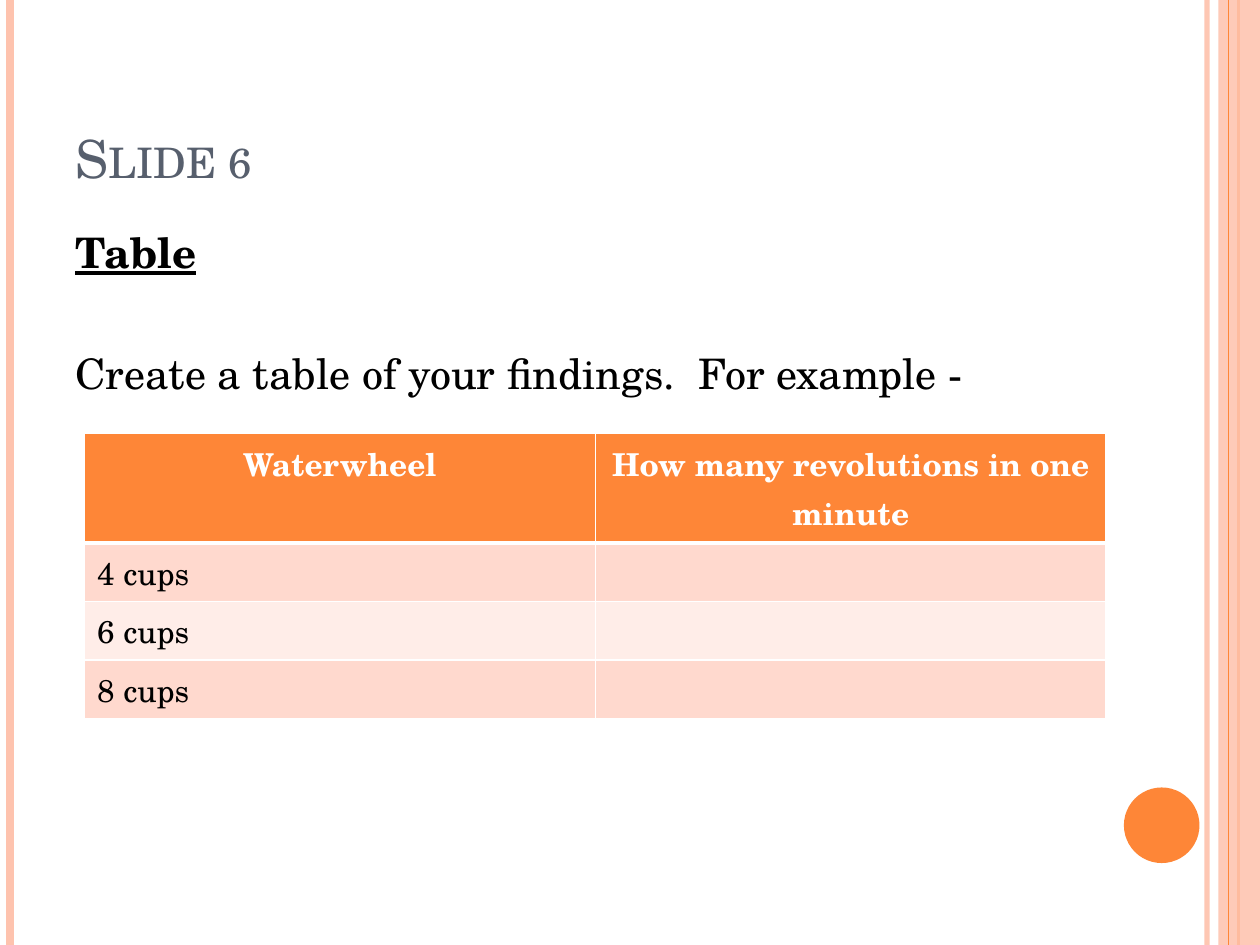
from lxml import etree
from pptx import Presentation
from pptx.dml.color import RGBColor
from pptx.enum.shapes import MSO_CONNECTOR, MSO_SHAPE
from pptx.enum.text import MSO_ANCHOR, PP_ALIGN
from pptx.oxml.ns import qn
from pptx.util import Inches, Pt

STRAIGHT = MSO_CONNECTOR.STRAIGHT
RECTANGLE, OVAL = MSO_SHAPE.RECTANGLE, MSO_SHAPE.OVAL
TOP, BOTTOM = MSO_ANCHOR.TOP, MSO_ANCHOR.BOTTOM
CENTER, LEFT = PP_ALIGN.CENTER, PP_ALIGN.LEFT

FONT = "TeX Gyre Schola"
ORANGE, PEACH, SLATE = "FE8637", "FEC3AE", "575F6D"
BLACK, WHITE = "000000", "FFFFFF"
BANDS = ["FFD9CE", "FFEDE8"]
SLIDE_WIDTH, SLIDE_HEIGHT = 10, 7.5
HEADER_HEIGHT, ROW_HEIGHT = 0.87, 0.465

TITLE = "Slide 6"
HEADING = "Table"
INSTRUCTION = "Create a table of your findings.  For example -"
FINDINGS = [
    ("Waterwheel", "How many revolutions in one minute"),
    ("4 cups", ""),
    ("6 cups", ""),
    ("8 cups", ""),
]
OUTER_RULES = [(9.58, PEACH, 3, 93), (0.08, PEACH, 4.5, 100), (9.83, ORANGE, 1.5, 100)]
INNER_RULE = (9.75, ORANGE, 0.75, 100)


def rgb(value):
    return RGBColor.from_string(value)


def set_opacity(fill, percent):
    color = fill._xPr.find(qn("a:solidFill"))[0]
    etree.SubElement(color, qn("a:alpha")).set("val", str(percent * 1000))


def add_rule(slide, x, color, width, opacity):
    rule = slide.shapes.add_connector(
        STRAIGHT, Inches(x), 0, Inches(x), Inches(SLIDE_HEIGHT))
    rule.line.width = Pt(width)
    rule.line.fill.solid()
    rule.line.color.rgb = rgb(color)
    if opacity < 100:
        set_opacity(rule.line.fill, opacity)
    etree.SubElement(rule._element.spPr, qn("a:effectLst"))


def add_block(slide, kind, left, top, width, height, color, opacity=100):
    block = slide.shapes.add_shape(
        kind, Inches(left), Inches(top), Inches(width), Inches(height))
    block.shadow.inherit = False
    block.line.fill.background()
    block.fill.solid()
    block.fill.fore_color.rgb = rgb(color)
    if opacity < 100:
        set_opacity(block.fill, opacity)


def add_frame(slide, top, height, anchor):
    frame = slide.shapes.add_textbox(
        Inches(0.5), Inches(top), Inches(8.17), Inches(height)).text_frame
    frame.word_wrap = True
    frame.vertical_anchor = anchor
    return frame


def add_run(paragraph, text, size, color, bold=False, underline=False):
    run = paragraph.add_run()
    run.text = text
    run.font.name = FONT
    run.font.size = Pt(size)
    run.font.color.rgb = rgb(color)
    run.font.bold = bold
    run.font.underline = underline
    return run


def set_borders(cell, widths):
    properties = cell._tc.get_or_add_tcPr()
    for side, width in widths.items():
        border = etree.SubElement(properties, qn("a:ln" + side))
        border.set("w", str(Pt(width)))
        fill = etree.SubElement(border, qn("a:solidFill"))
        etree.SubElement(fill, qn("a:srgbClr")).set("val", WHITE)


def add_findings(slide):
    heights = [HEADER_HEIGHT] + [ROW_HEIGHT] * (len(FINDINGS) - 1)
    table = slide.shapes.add_table(
        len(FINDINGS), len(FINDINGS[0]), Inches(0.67), Inches(3.44),
        Inches(8.11), Inches(sum(heights))).table
    for row, texts in enumerate(FINDINGS):
        header = row == 0
        table.rows[row].height = Inches(heights[row])
        for column, text in enumerate(texts):
            cell = table.cell(row, column)
            set_borders(cell, {"L": 1, "R": 1, "T": 3 if row == 1 else 1,
                               "B": 3 if header else 1})
            cell.fill.solid()
            cell.fill.fore_color.rgb = rgb(ORANGE if header else BANDS[(row - 1) % 2])
            paragraph = cell.text_frame.paragraphs[0]
            paragraph.alignment = CENTER if header else LEFT
            if text:
                add_run(paragraph, text, 18, WHITE if header else BLACK, bold=header)


def main():
    deck = Presentation()
    deck.slide_width, deck.slide_height = Inches(SLIDE_WIDTH), Inches(SLIDE_HEIGHT)
    slide = deck.slides.add_slide(deck.slide_layouts[6])

    for rule in OUTER_RULES:
        add_rule(slide, *rule)
    add_block(slide, RECTANGLE, 9.67, 0, 0.33, SLIDE_HEIGHT, PEACH, 87)
    add_rule(slide, *INNER_RULE)
    add_block(slide, OVAL, 8.92, 6.25, 0.6, 0.6, ORANGE)

    title = add_frame(slide, 0.3, 1.25, BOTTOM).paragraphs[0]
    title_run = add_run(title, TITLE, 30, SLATE)
    title_run._r.get_or_add_rPr().set("cap", "small")

    body = add_frame(slide, 1.75, 5.33, TOP)
    heading, instruction = body.paragraphs[0], body.add_paragraph()
    heading.space_before, instruction.space_before = Pt(6), Pt(40)
    add_run(heading, HEADING, 24, BLACK, bold=True, underline=True)
    add_run(instruction, INSTRUCTION, 24, BLACK)

    add_findings(slide)
    deck.save("out.pptx")


if __name__ == "__main__":
    main()
